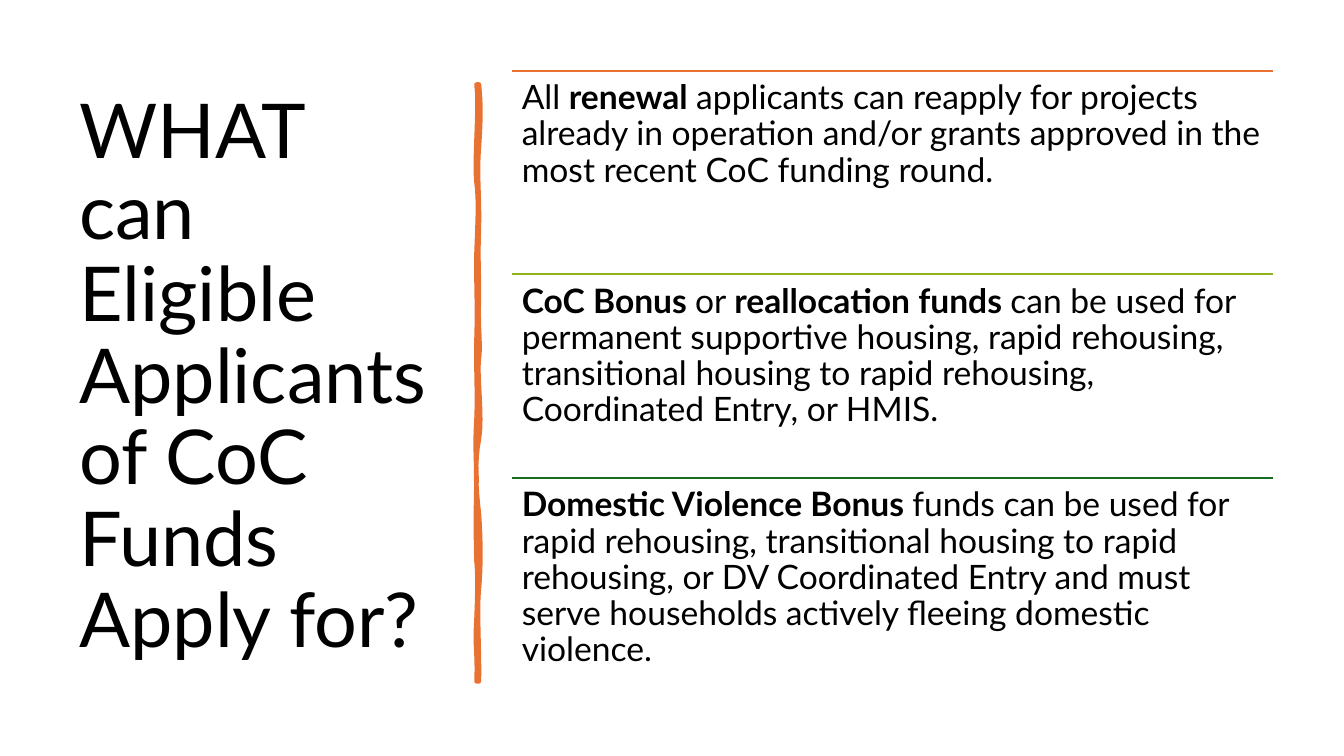
import dataclasses

import lxml.etree
import pptx
import pptx.dml.color
import pptx.enum.shapes
import pptx.enum.text
import pptx.oxml.ns
import pptx.presentation
import pptx.shapes.autoshape
import pptx.slide
import pptx.text.text
import pptx.util

Cm = pptx.util.Cm
Point = tuple[float, float]
Curve = tuple[Point, Point, Point]

COLOURS = {"text": "000000", "orange": "E97132", "lime": "8EB21E", "green": "196B24"}
FONT = "Lato"

# Lengths in centimetres
TOP = 1.78
RULE_LEFT, RULE_WIDTH, ROW_HEIGHT = 12.9, 19.18, 5.13
STEPS_PER_CURVE = 8


@dataclasses.dataclass(frozen=True)
class Phrase:
    text: str
    bold: bool = False


@dataclasses.dataclass(frozen=True)
class FundingRow:
    rule_colour: str
    phrases: tuple[Phrase, ...]


TITLE = (Phrase("WHAT can Eligible Applicants of CoC Funds Apply for?"),)

ROWS = (
    FundingRow("orange", (
        Phrase("All "),
        Phrase("renewal", True),
        Phrase(" applicants can reapply for projects already in operation and/or "
               "grants approved in the most recent CoC funding round."),
    )),
    FundingRow("lime", (
        Phrase("CoC Bonus ", True),
        Phrase("or "),
        Phrase("reallocation funds ", True),
        Phrase("can be used for permanent supportive housing, rapid rehousing, "
               "transitional housing to rapid rehousing, Coordinated Entry, or HMIS."),
    )),
    FundingRow("green", (
        Phrase("Domestic Violence Bonus ", True),
        Phrase("funds can be used for rapid rehousing, transitional housing to rapid "
               "rehousing, or DV Coordinated Entry and must serve households actively "
               "fleeing domestic violence."),
    )),
)

# Each curve: two control points and an end point
RIGHT_EDGE_START: Point = (12.07, 2.13)
RIGHT_EDGE: tuple[Curve, ...] = (
    ((12.12, 2.59), (12.12, 3.02), (12.07, 3.71)),
    ((12.01, 4.39), (12.09, 4.95), (12.07, 5.74)),
    ((12.04, 6.53), (12.07, 6.65), (12.07, 7.47)),
    ((12.04, 8.26), (12.12, 8.69), (12.07, 9.04)),
    ((12.01, 9.4), (12.17, 10.52), (12.07, 11.07)),
    ((11.96, 11.61), (11.99, 12.29), (12.07, 12.95)),
    ((12.12, 13.61), (12.12, 14.33), (12.07, 14.83)),
    ((12.01, 15.32), (12.09, 16.51), (12.07, 17.17)),
)
LEFT_EDGE_START: Point = (12.01, 17.17)
LEFT_EDGE: tuple[Curve, ...] = (
    ((12.04, 16.41), (11.96, 16.36), (12.01, 15.57)),
    ((12.04, 14.81), (12.04, 14.48), (12.01, 14.15)),
    ((11.99, 13.82), (11.99, 12.57), (12.01, 12.12)),
    ((12.01, 11.66), (11.96, 11.3), (12.01, 10.54)),
    ((12.04, 9.8), (11.99, 9.47), (12.01, 8.51)),
    ((12.04, 7.57), (11.99, 7.14), (12.01, 6.35)),
    ((12.04, 5.54), (12.07, 5.08), (12.01, 4.6)),
    ((11.94, 4.14), (12.09, 2.64), (12.01, 2.13)),
)


def rgb(name: str) -> pptx.dml.color.RGBColor:
    return pptx.dml.color.RGBColor.from_string(COLOURS[name])


def trace_edge(start: Point, curves: tuple[Curve, ...]) -> list[Point]:
    """Sample a chain of cubic Bézier curves, in EMU."""
    points = [(Cm(start[0]), Cm(start[1]))]
    for first, second, end in curves:
        for step in range(1, STEPS_PER_CURVE + 1):
            t = step / STEPS_PER_CURVE
            x, y = (
                (1 - t) ** 3 * a + 3 * (1 - t) ** 2 * t * b
                + 3 * (1 - t) * t ** 2 * c + t ** 3 * d
                for a, b, c, d in zip(start, first, second, end)
            )
            points.append((Cm(x), Cm(y)))
        start = end
    return points


def add_text(slide: pptx.slide.Slide, left: float, top: float, width: float,
             height: float, phrases: tuple[Phrase, ...], size: float,
             inset: float, anchor: pptx.enum.text.MSO_ANCHOR) -> None:
    frame = slide.shapes.add_textbox(Cm(left), Cm(top), Cm(width), Cm(height)).text_frame
    frame.word_wrap = True
    frame.vertical_anchor = anchor
    frame.margin_left = frame.margin_right = Cm(0.25)
    frame.margin_top = frame.margin_bottom = Cm(inset)
    paragraph = frame.paragraphs[0]
    paragraph.line_spacing = 0.9
    paragraph.font.name = FONT
    paragraph.font.size = pptx.util.Pt(size)
    paragraph.font.color.rgb = rgb("text")
    for phrase in phrases:
        run = paragraph.add_run()
        run.text = phrase.text
        if phrase.bold:
            run.font.bold = True


def add_brush_divider(slide: pptx.slide.Slide) -> None:
    start, *rest = (trace_edge(RIGHT_EDGE_START, RIGHT_EDGE)
                    + trace_edge(LEFT_EDGE_START, LEFT_EDGE))
    builder = slide.shapes.build_freeform(*start)
    builder.add_line_segments(rest, close=True)
    divider = builder.convert_to_shape()
    divider.shadow.inherit = False
    divider.fill.solid()
    divider.fill.fore_color.rgb = rgb("orange")
    divider.line.color.rgb = rgb("orange")
    divider.line.width = pptx.util.Pt(3.25)
    outline = divider.element.spPr.get_or_add_ln()
    lxml.etree.SubElement(outline, pptx.oxml.ns.qn("a:round"))


def add_rule(slide: pptx.slide.Slide, top: float, colour: str) -> None:
    rule = slide.shapes.add_connector(
        pptx.enum.shapes.MSO_CONNECTOR.STRAIGHT,
        Cm(RULE_LEFT), Cm(top), Cm(RULE_LEFT + RULE_WIDTH), Cm(top))
    rule.line.color.rgb = rgb(colour)
    rule.line.width = pptx.util.Pt(1.5)
    lxml.etree.SubElement(rule.element.spPr, pptx.oxml.ns.qn("a:effectLst"))


def main() -> None:
    presentation = pptx.Presentation()
    presentation.slide_width = Cm(33.87)
    presentation.slide_height = Cm(19.05)
    slide = presentation.slides.add_slide(presentation.slide_layouts[6])

    add_text(slide, 1.75, TOP, 9.5, 15.52, TITLE, 54, 0.13,
             pptx.enum.text.MSO_ANCHOR.MIDDLE)
    add_brush_divider(slide)
    for index, row in enumerate(ROWS):
        top = TOP + index * ROW_HEIGHT
        add_rule(slide, top, row.rule_colour)
        add_text(slide, RULE_LEFT, top, RULE_WIDTH, ROW_HEIGHT, row.phrases, 24, 0.25,
                 pptx.enum.text.MSO_ANCHOR.TOP)

    presentation.save("out.pptx")


if __name__ == "__main__":
    main()
